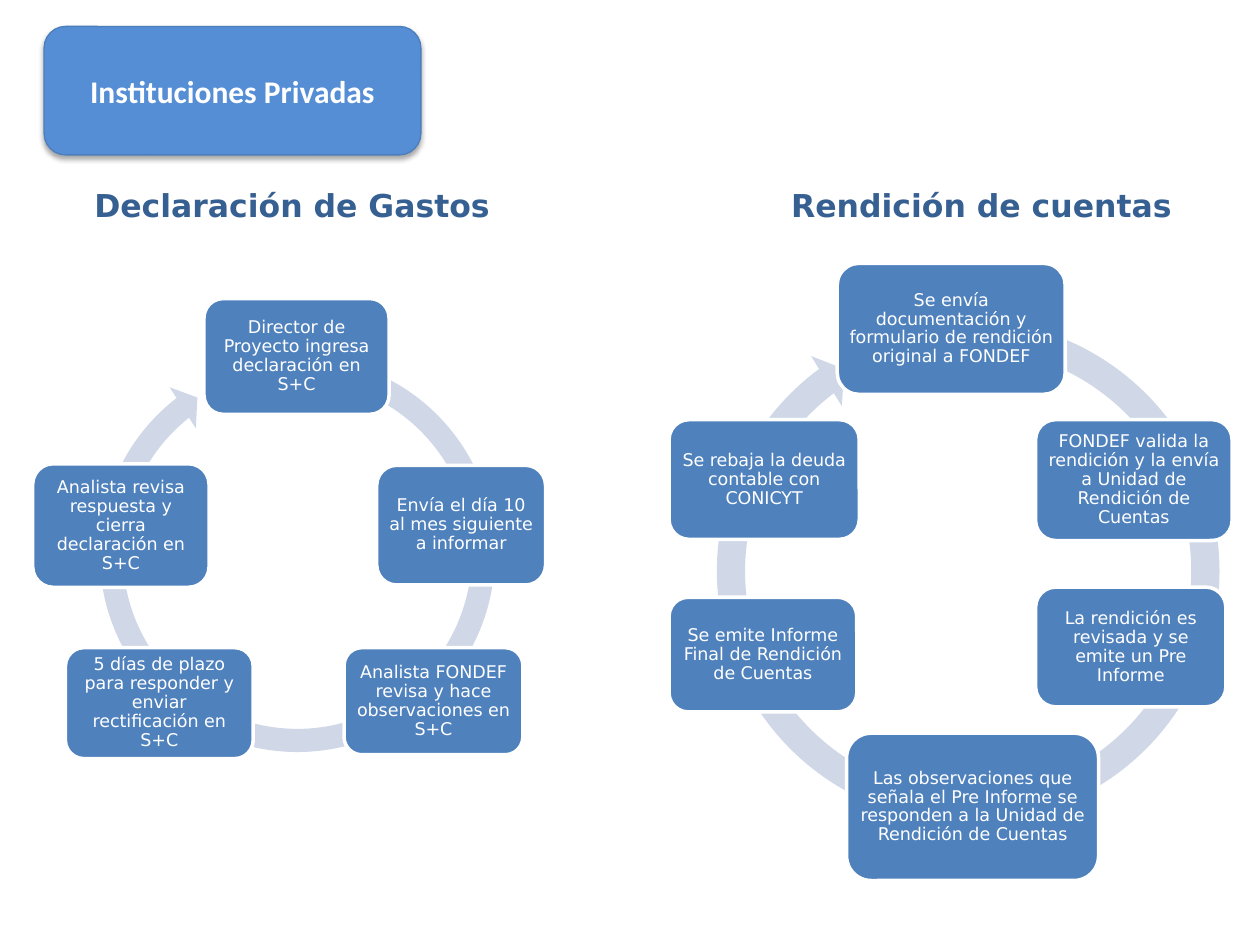
from dataclasses import dataclass

from lxml import etree
from pptx import Presentation
from pptx.dml.color import RGBColor
from pptx.enum.shapes import MSO_SHAPE
from pptx.enum.text import MSO_ANCHOR, MSO_AUTO_SIZE, PP_ALIGN
from pptx.oxml.ns import qn
from pptx.util import Pt

ROUND_RECT = MSO_SHAPE.ROUNDED_RECTANGLE
CIRCULAR_ARROW = MSO_SHAPE.CIRCULAR_ARROW
MIDDLE = MSO_ANCHOR.MIDDLE
CENTER = PP_ALIGN.CENTER
FIT_SHAPE = MSO_AUTO_SIZE.SHAPE_TO_FIT_TEXT

BODY_FONT = "DejaVu Sans"
TITLE_FONT = "Calibri"
WHITE = "FFFFFF"
NODE_FILL = "4F81BD"
RING_FILL = "D0D8E8"
HEADING = "376092"
TITLE_FILL = "558ED5"
TITLE_LINE = "4B7EBC"
HEADING_TOP = 103
HEADING_HEIGHT = 29


@dataclass
class Node:
    text: str
    left: float
    top: float
    width: float
    height: float


@dataclass
class Cycle:
    heading: str
    heading_left: float
    heading_width: float
    left: float
    top: float
    size: float
    adjustments: list[float]
    nodes: list[Node]


CYCLES = [
    Cycle(
        "Declaración de Gastos", 46.8, 247, 49.7, 196.6, 240.5,
        [0.055, 3.307, 139.194, 172.992, 0.058],
        [
            Node("Director de Proyecto ingresa declaración en S+C", 116.6, 170.6, 105.8, 66.2),
            Node("Envía el día 10 al mes siguiente a informar", 215.3, 265.9, 96.5, 68.4),
            Node("Analista FONDEF revisa y hace observaciones en S+C", 196.6, 370.1, 102.2, 61.2),
            Node("5 días de plazo para responder y enviar rectificación en S+C", 37.4, 370.1, 107.3, 63.4),
            Node("Analista revisa respuesta y cierra declaración en S+C", 18.7, 265, 100.8, 70.6),
        ],
    ),
    Cycle(
        "Rendición de cuentas", 445, 232.6, 401, 174.2, 304.6,
        [0.053, 3.126, 139.984, 172.628, 0.055],
        [
            Node("Se envía documentación y formulario de rendición original a FONDEF", 478.4, 150.5, 130.3, 74.9),
            Node("FONDEF valida la rendición y la envía a Unidad de Rendición de Cuentas", 591.8, 239.8, 112.3, 69.1),
            Node("La rendición es revisada y se emite un Pre Informe", 591.8, 335.5, 108.7, 68.4),
            Node("Las observaciones que señala el Pre Informe se responden a la Unidad de Rendición de Cuentas",
                 483.8, 419, 144, 84.2),
            Node("Se emite Informe Final de Rendición de Cuentas", 382.3, 341.3, 107.3, 65.5),
            Node("Se rebaja la deuda contable con CONICYT", 382.3, 239.8, 108.7, 68.4),
        ],
    ),
]


def color(value: str) -> RGBColor:
    return RGBColor.from_string(value)


def box(*lengths: float) -> list:
    return [Pt(length) for length in lengths]


def write(tf, text: str, font: str, size: float, hex_color: str, bold: bool = False):
    tf.text = text
    p = tf.paragraphs[0]
    f = p.runs[0].font
    f.name = font
    f.size = Pt(size)
    f.bold = bold
    f.color.rgb = color(hex_color)
    return p


def paint(sp, fill: str, line: str = "", line_width: float = 0) -> None:
    sp.shadow.inherit = False
    sp.fill.solid()
    sp.fill.fore_color.rgb = color(fill)
    if line:
        sp.line.color.rgb = color(line)
        sp.line.width = Pt(line_width)
    else:
        sp.line.fill.background()


def draw_node(shapes, node: Node) -> None:
    sp = shapes.add_shape(ROUND_RECT, *box(node.left, node.top, node.width, node.height))
    paint(sp, NODE_FILL, WHITE, 2)
    tf = sp.text_frame
    tf.word_wrap = True
    tf.vertical_anchor = MIDDLE
    tf.margin_left = tf.margin_right = tf.margin_top = tf.margin_bottom = Pt(3)
    p = write(tf, node.text, BODY_FONT, 10, WHITE)
    p.alignment = CENTER
    p.line_spacing = 0.9


def draw_cycle(s, cycle: Cycle) -> None:
    heading = s.shapes.add_textbox(
        *box(cycle.heading_left, HEADING_TOP, cycle.heading_width, HEADING_HEIGHT))
    tf = heading.text_frame
    tf.word_wrap = False
    tf.auto_size = FIT_SHAPE
    write(tf, cycle.heading, BODY_FONT, 18, HEADING, True)

    shapes = s.shapes.add_group_shape().shapes
    ring = shapes.add_shape(CIRCULAR_ARROW, *box(cycle.left, cycle.top, cycle.size, cycle.size))
    for i, value in enumerate(cycle.adjustments):
        ring.adjustments[i] = value
    paint(ring, RING_FILL)
    for node in cycle.nodes:
        draw_node(shapes, node)


def add_shadow(sp) -> None:
    effects = sp._element.spPr.find(qn("a:effectLst"))
    shadow = etree.SubElement(effects, qn("a:outerShdw"), blurRad=str(Pt(3.1)),
                              dist=str(Pt(1.8)), dir="5400000", rotWithShape="0")
    tint = etree.SubElement(shadow, qn("a:srgbClr"), val="000000")
    etree.SubElement(tint, qn("a:alpha"), val="35000")


def draw_title(s) -> None:
    sp = s.shapes.add_shape(ROUND_RECT, *box(25.2, 15.1, 215.3, 73.4))
    paint(sp, TITLE_FILL, TITLE_LINE, 0.75)
    add_shadow(sp)
    tf = sp.text_frame
    tf.word_wrap = True
    tf.vertical_anchor = MIDDLE
    write(tf, "Instituciones Privadas", TITLE_FONT, 18, WHITE, True).alignment = CENTER


def main() -> None:
    prs = Presentation()
    prs.slide_width, prs.slide_height = box(720, 540)
    s = prs.slides.add_slide(prs.slide_layouts[6])
    for cycle in CYCLES:
        draw_cycle(s, cycle)
    draw_title(s)
    prs.save("out.pptx")


if __name__ == "__main__":
    main()
